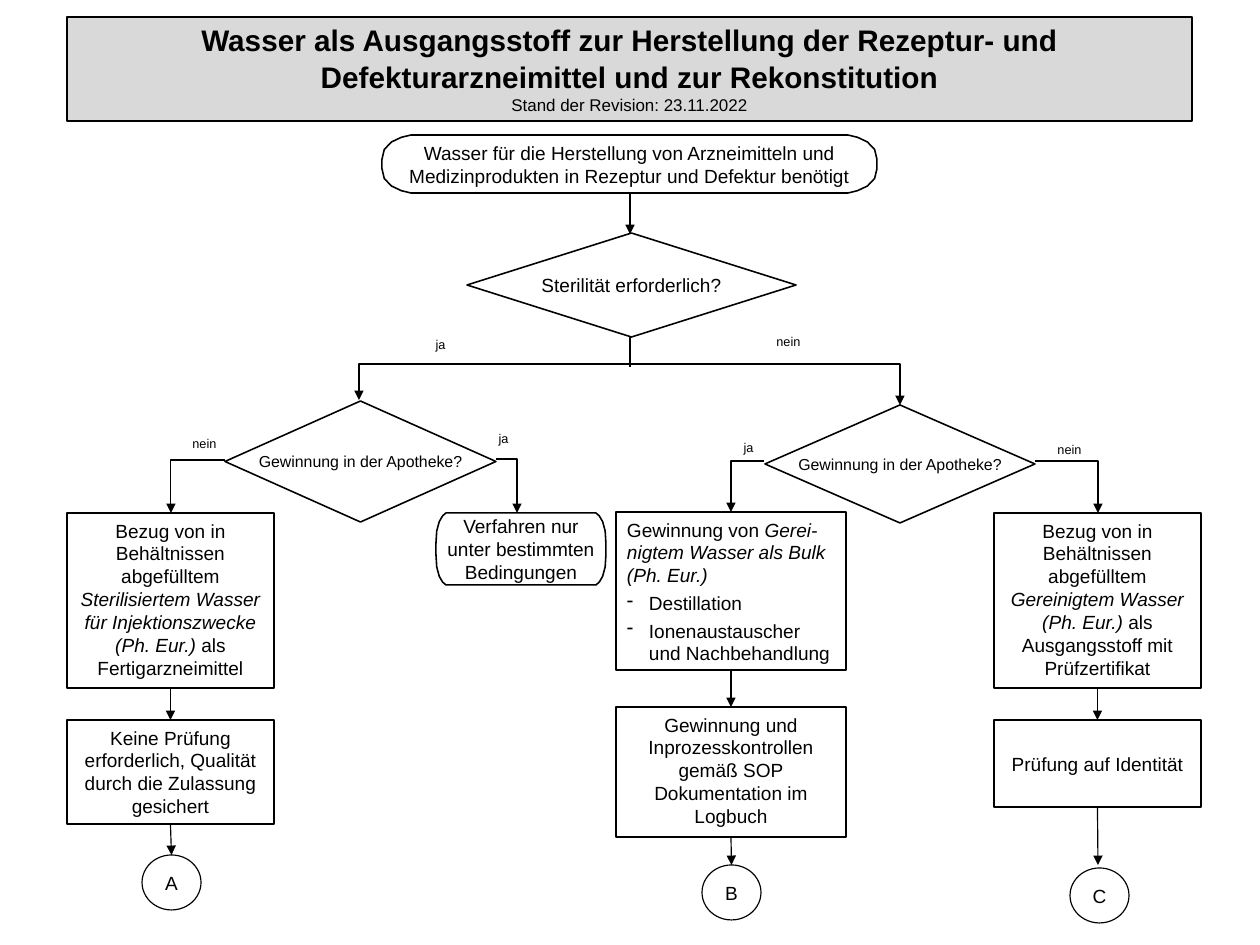
from lxml.etree import SubElement
from pptx import Presentation
from pptx.dml.color import RGBColor
from pptx.enum.shapes import MSO_CONNECTOR as LINK, MSO_SHAPE as SHAPE
from pptx.enum.text import MSO_ANCHOR as ANCHOR, MSO_AUTO_SIZE as AUTO, PP_ALIGN as ALIGN
from pptx.oxml.ns import qn
from pptx.util import Pt

PX = 8000  # 1260 by 945 px make 28 by 21 cm
BLACK, WHITE, GREY = "000000", "FFFFFF", "D9D9D9"

# Quarter outline of a terminal: share of corner width, share of height
CORNER = [(1, 0), (0.67, 0.04), (0.33, 0.12), (0.08, 0.25), (0, 0.42)]

TITLE = "Wasser als Ausgangsstoff zur Herstellung der Rezeptur- und Defekturarzneimittel und zur Rekonstitution"
REVISION = "Stand der Revision: 23.11.2022"
QUESTION = "Gewinnung in der Apotheke?"

# text, left, top, width
ANSWERS = [
    ("ja", 398, 333, 85), ("nein", 758, 330, 61),
    ("nein", 174, 432, 61), ("ja", 467, 427, 73),
    ("ja", 718, 436, 61), ("nein", 1045, 438, 49),
]

# start x, start y, end x, end y: across first, then down
BRANCHES = [
    (630, 364, 359, 400), (630, 364, 900, 405),
    (225, 460, 171, 513), (496, 459, 517, 513),
    (764, 461, 731, 512), (1035, 461, 1098, 513),
]


def color(code):
    return RGBColor.from_string(code)


def px(*lengths):
    return [round(length * PX) for length in lengths]


def apply(target, values):
    for name, value in values.items():
        setattr(target, name, value)


def outline(shape, weight=0.75, fill=None):
    shape.shadow.inherit = False
    if fill:
        shape.fill.solid()
        shape.fill.fore_color.rgb = color(fill)
    else:
        shape.fill.background()
    shape.line.color.rgb = color(BLACK)
    shape.line.width = Pt(weight)


def set_frame(frame, anchor=ANCHOR.TOP, wrap=True, side=11, top=6):
    apply(frame, dict(
        auto_size=AUTO.NONE, word_wrap=wrap, vertical_anchor=anchor,
        margin_left=side * PX, margin_right=side * PX,
        margin_top=top * PX, margin_bottom=top * PX))


def write(paragraph, text, size=12, bold=False, **layout):
    """Text between asterisks is set in italics."""
    apply(paragraph, dict(dict(alignment=ALIGN.CENTER), **layout))
    for number, part in enumerate(text.split("*")):
        if part:
            run = paragraph.add_run()
            run.text = part
            apply(run.font, dict(name="Arial", size=Pt(size), bold=bold, italic=number % 2 == 1))
            run.font.color.rgb = color(BLACK)


def add_dash(paragraph):
    properties = paragraph._p.get_or_add_pPr()
    properties.set("marL", str(22 * PX))
    properties.set("indent", str(-22 * PX))
    SubElement(properties, qn("a:buChar")).set("char", "-")


def add_title(slide):
    title = slide.shapes.title
    apply(title, dict(zip(("left", "top", "width", "height"), px(67, 17, 1125, 104))))
    title.fill.solid()
    title.fill.fore_color.rgb = color(GREY)
    title.line.color.rgb = color(BLACK)
    title.line.width = Pt(0.75)
    set_frame(title.text_frame, top=3)
    write(title.text_frame.paragraphs[0], TITLE, 18.7, True, line_spacing=1.05)
    write(title.text_frame.add_paragraph(), REVISION, 10.7, space_before=Pt(0))


def add_box(slide, place, *lines, anchor=ANCHOR.TOP, **layout):
    box = slide.shapes.add_shape(SHAPE.RECTANGLE, *px(*place))
    outline(box)
    frame = box.text_frame
    set_frame(frame, anchor)
    for number, line in enumerate(lines):
        write(frame.add_paragraph() if number else frame.paragraphs[0], line, **layout)
    return box


def add_decision(slide, place, text, size):
    diamond = slide.shapes.add_shape(SHAPE.DIAMOND, *px(*place))
    outline(diamond, 1)
    set_frame(diamond.text_frame, ANCHOR.MIDDLE, wrap=False, side=0)
    write(diamond.text_frame.paragraphs[0], text, size)


def add_terminal(slide, place, corner, text, side):
    left, top, width, height = place
    upper_left = [(x * corner, y * height) for x, y in CORNER]
    left_side = upper_left + [(x, height - y) for x, y in reversed(upper_left)]
    right_side = [(width - x, y) for x, y in reversed(left_side)]
    points = [px(left + x, top + y) for x, y in left_side + right_side]
    builder = slide.shapes.build_freeform(*points[0])
    builder.add_line_segments(points[1:], close=True)
    terminal = builder.convert_to_shape()
    outline(terminal, 1)
    set_frame(terminal.text_frame, ANCHOR.MIDDLE, side=side)
    write(terminal.text_frame.paragraphs[0], text)


def add_exit(slide, left, top, letter):
    circle = slide.shapes.add_shape(SHAPE.OVAL, *px(left, top, 59, 55))
    outline(circle, fill=WHITE)
    set_frame(circle.text_frame, ANCHOR.MIDDLE, wrap=False, side=0)
    write(circle.text_frame.paragraphs[0], letter)
    return circle


def add_answer(slide, text, left, top, width):
    answer = slide.shapes.add_textbox(*px(left, top, width, 25))
    set_frame(answer.text_frame)
    write(answer.text_frame.paragraphs[0], text, 8, line_spacing=0.9)


def add_line(slide, ends, kind=LINK.STRAIGHT, arrow=True):
    line = slide.shapes.add_connector(kind, *px(*ends))
    line.line.color.rgb = color(BLACK)
    line.line.width = Pt(0.75)
    if arrow:
        SubElement(line.line._get_or_add_ln(), qn("a:tailEnd")).set("type", "triangle")
    SubElement(line._element.spPr, qn("a:effectLst"))
    return line


def add_branch(slide, ends):
    branch = add_line(slide, ends, LINK.ELBOW)
    bend = SubElement(branch._element.spPr.prstGeom.get_or_add_avLst(), qn("a:gd"))
    bend.set("name", "adj1")
    bend.set("fmla", "val 100000")


def join(slide, upper, lower):
    arrow = add_line(slide, (0, 0, 0, 0))
    arrow.begin_connect(upper, 2)
    arrow.end_connect(lower, 0)


def main():
    deck = Presentation()
    deck.slide_width, deck.slide_height = px(1260, 945)
    slide = deck.slides.add_slide(deck.slide_layouts[5])
    add_title(slide)

    # Start and decisions
    add_terminal(slide, (382, 135, 495, 58), 29,
                 "Wasser für die Herstellung von Arzneimitteln und "
                 "Medizinprodukten in Rezeptur und Defektur benötigt", 11)
    add_decision(slide, (467, 233, 329, 104), "Sterilität erforderlich?", 12)
    add_decision(slide, (225, 401, 271, 121), QUESTION, 10)
    add_decision(slide, (765, 405, 270, 118), QUESTION, 10)
    add_line(slide, (630, 193, 630, 234))
    add_line(slide, (630, 337, 630, 367), arrow=False)
    for ends in BRANCHES:
        add_branch(slide, ends)
    for answer in ANSWERS:
        add_answer(slide, *answer)

    # Sterile water
    sterile = add_box(slide, (67, 513, 207, 175),
                      "Bezug von in Behältnissen abgefülltem *Sterilisiertem Wasser für "
                      "Injektionszwecke (Ph. Eur.) *als Fertigarzneimittel")
    approved = add_box(slide, (67, 720, 207, 104),
                       "Keine Prüfung erforderlich, Qualität durch die Zulassung gesichert")
    add_terminal(slide, (436, 513, 170, 72), 10, "Verfahren nur unter bestimmten Bedingungen", 9)

    # Purified water made in the pharmacy
    bulk = add_box(slide, (616, 512, 230, 158),
                   "Gewinnung von *Gerei-nigtem Wasser als Bulk (Ph. Eur.)*",
                   "Destillation", "Ionenaustauscher und Nachbehandlung",
                   alignment=ALIGN.LEFT)
    for method in bulk.text_frame.paragraphs[1:]:
        method.space_before = Pt(3)
        add_dash(method)
    control = add_box(slide, (616, 707, 230, 130),
                      "Gewinnung und Inprozesskontrollen gemäß SOP", "Dokumentation im Logbuch")

    # Purified water bought in
    purified = add_box(slide, (994, 513, 207, 175),
                       "Bezug von in Behältnissen abgefülltem *Gereinigtem Wasser (Ph. Eur.) *"
                       "als Ausgangsstoff mit Prüfzertifikat")
    identity = add_box(slide, (994, 720, 207, 87), "Prüfung auf Identität", anchor=ANCHOR.MIDDLE)

    # Exits
    exit_a = add_exit(slide, 142, 855, "A")
    exit_b = add_exit(slide, 702, 865, "B")
    add_exit(slide, 1070, 868, "C")
    for upper, lower in [(sterile, approved), (approved, exit_a), (bulk, control),
                         (control, exit_b), (purified, identity)]:
        join(slide, upper, lower)
    add_line(slide, (1098, 807, 1098, 865)).begin_connect(identity, 2)

    deck.save("out.pptx")


if __name__ == "__main__":
    main()
